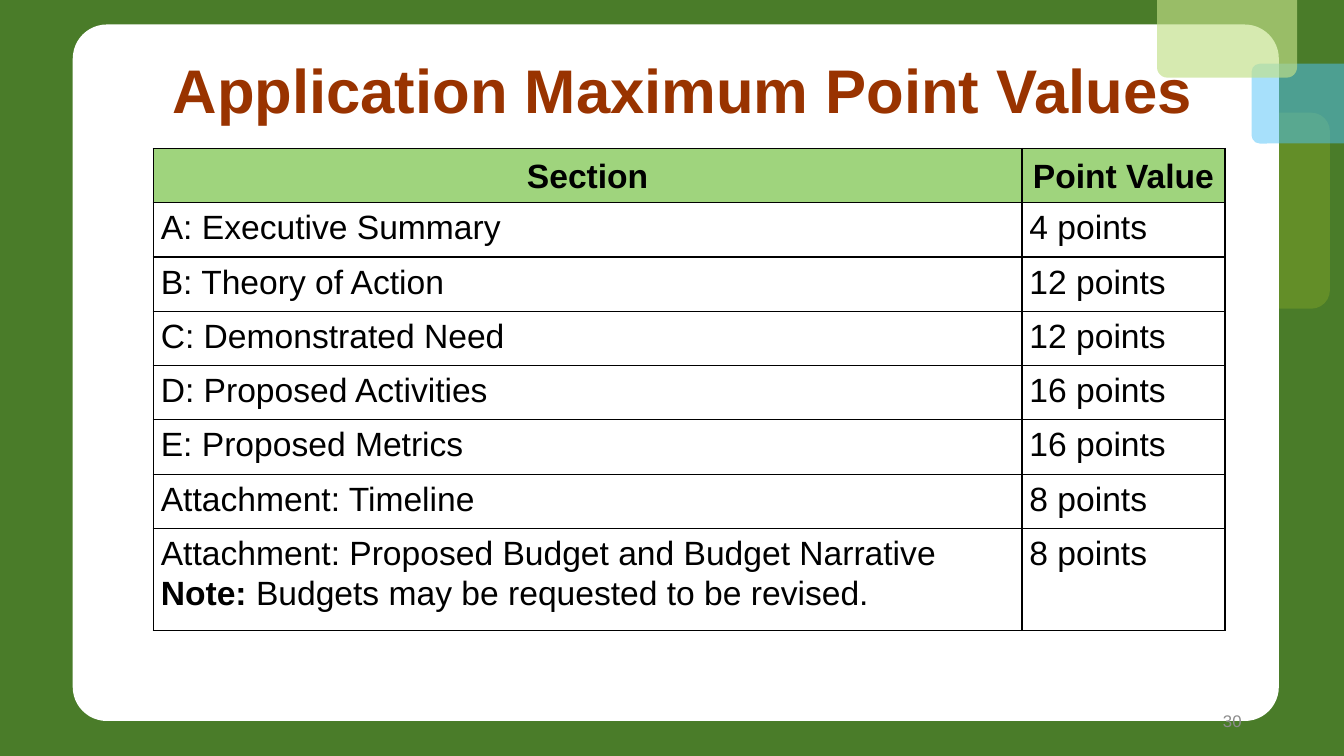
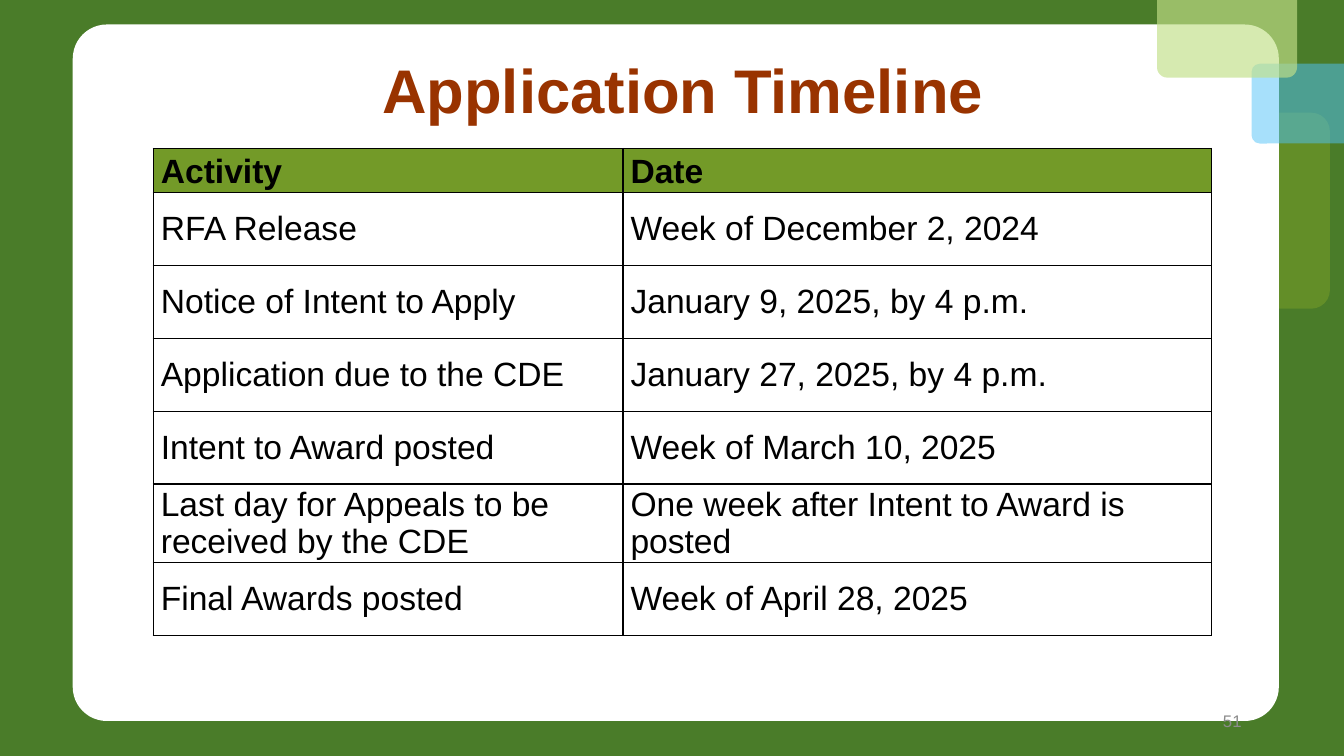
from lxml import etree
from pptx import Presentation
from pptx.dml.color import RGBColor
from pptx.enum import shapes, text
from pptx.oxml import ns
from pptx.util import Pt

# Shared look
FONT = "Arial"
COLORS = {
    "green": "4A7C29", "olive": "739A28", "white": "FFFFFF", "sky": "51C3F9",
    "lime": "C2E088", "rust": "993300", "black": "000000", "grey": "8C8C8C",
    "mint": "9FD47D",
}
# Left, top, width, height, corner ratio, colour, opacity in percent
PANELS = [
    (790, 80.5, 160, 140, 0.095, "olive", 62),
    (52, 17.5, 861.5, 497.5, 0.049, "white", 100),
    (894, 45.5, 160, 57, 0.103, "sky", 50),
    (826.5, -38, 100, 93.5, 0.079, "lime", 66),
]
TITLE_BOX = (81.5, 29, 813, 75.5)
NUMBER_BOX = (678, 500.5, 216, 28.5)
TABLE_LEFT, TABLE_TOP = 109.5, 106
BOLD_LEAD = "Note: "

# Slide content
SLIDES = [
    {
        "title": "Application Maximum Point Values", "number": "30",
        "header": "mint", "header_align": text.PP_ALIGN.CENTER,
        "body_anchor": text.MSO_ANCHOR.TOP,
        "margins": (5.4, 2.9), "body_spacing": 1.07, "space_after": 0,
        "cols": (620.5, 145), "heights": [38.8] * 7 + [72.8],
        "rows": [
            ("Section", "Point Value"),
            ("A: Executive Summary", "4 points"),
            ("B: Theory of Action", "12 points"),
            ("C: Demonstrated Need", "12 points"),
            ("D: Proposed Activities", "16 points"),
            ("E: Proposed Metrics", "16 points"),
            ("Attachment: Timeline", "8 points"),
            ("Attachment: Proposed Budget and Budget Narrative\n"
             "Note: Budgets may be requested to be revised.", "8 points"),
        ],
    },
    {
        "title": "Application Timeline", "number": "51",
        "header": "olive", "header_align": text.PP_ALIGN.LEFT,
        "body_anchor": text.MSO_ANCHOR.MIDDLE,
        "margins": (5.4, 0), "body_spacing": 1.0, "space_after": 12,
        "cols": (335.5, 420.5), "heights": [31.5] + [52.1] * 4 + [56, 52.1],
        "rows": [
            ("Activity", "Date"),
            ("RFA Release", "Week of December 2, 2024"),
            ("Notice of Intent to Apply", "January 9, 2025, by 4 p.m."),
            ("Application due to the CDE", "January 27, 2025, by 4 p.m."),
            ("Intent to Award posted", "Week of March 10, 2025"),
            ("Last day for Appeals to be received by the CDE",
             "One week after Intent to Award is posted"),
            ("Final Awards posted", "Week of April 28, 2025"),
        ],
    },
]


def rgb(name):
    return RGBColor.from_string(COLORS[name])


def points(box):
    return [Pt(v) for v in box]


def style(font, size, color, bold=False):
    font.name, font.size, font.bold = FONT, Pt(size), bold
    font.color.rgb = rgb(color)


def build_master(prs, s):
    """Draw the background panels and move them to the slide master."""
    master = prs.slide_master
    master.background.fill.solid()
    master.background.fill.fore_color.rgb = rgb("green")
    for i, (*box, corner, color, opacity) in enumerate(PANELS):
        sp = s.shapes.add_shape(shapes.MSO_SHAPE.ROUNDED_RECTANGLE, *points(box))
        sp.adjustments[0] = corner
        sp.shadow.inherit = False
        sp.line.fill.background()
        sp.fill.solid()
        sp.fill.fore_color.rgb = rgb(color)
        if opacity < 100:
            clr = sp.element.spPr.find(".//" + ns.qn("a:srgbClr"))
            etree.SubElement(clr, ns.qn("a:alpha"), val=str(opacity * 1000))
        master.shapes.element.insert(2 + i, sp.element)


def add_title(s, title):
    sp = s.shapes.title
    sp.left, sp.top, sp.width, sp.height = points(TITLE_BOX)
    tf = sp.text_frame
    tf.text = title
    tf.vertical_anchor = text.MSO_ANCHOR.MIDDLE
    p = tf.paragraphs[0]
    p.alignment, p.line_spacing = text.PP_ALIGN.CENTER, 0.9
    style(p.runs[0].font, 44, "rust", True)


def add_number(s, number):
    tf = s.shapes.add_textbox(*points(NUMBER_BOX)).text_frame
    tf.word_wrap = True
    tf.vertical_anchor = text.MSO_ANCHOR.MIDDLE
    tf.text = number
    p = tf.paragraphs[0]
    p.alignment = text.PP_ALIGN.RIGHT
    style(p.runs[0].font, 12, "grey")


def add_borders(cell):
    tc_pr = cell._tc.get_or_add_tcPr()
    for i, side in enumerate("LRTB"):
        ln = etree.Element(ns.qn("a:ln" + side), w=str(Pt(1)))
        fill = etree.SubElement(ln, ns.qn("a:solidFill"))
        etree.SubElement(fill, ns.qn("a:srgbClr"), val=COLORS["black"])
        tc_pr.insert(i, ln)


def fill_cell(cell, words, item, is_header):
    cell.margin_left = cell.margin_right = Pt(item["margins"][0])
    cell.margin_top = cell.margin_bottom = Pt(item["margins"][1])
    cell.vertical_anchor = text.MSO_ANCHOR.MIDDLE if is_header else item["body_anchor"]
    cell.fill.solid()
    cell.fill.fore_color.rgb = rgb(item["header"] if is_header else "white")
    add_borders(cell)
    cell.text = words
    for p in cell.text_frame.paragraphs:
        p.alignment = item["header_align"] if is_header else text.PP_ALIGN.LEFT
        p.line_spacing = 1.07 if is_header else item["body_spacing"]
        p.space_after = Pt(0 if is_header else item["space_after"])
        r = p.runs[0]
        style(r.font, 24, "black", is_header)
        if r.text.startswith(BOLD_LEAD):
            rest = p.add_run()
            rest.text = r.text[len(BOLD_LEAD):]
            style(rest.font, 24, "black")
            r.text = BOLD_LEAD
            r.font.bold = True


def add_grid(s, item):
    rows, cols, heights = item["rows"], item["cols"], item["heights"]
    box = (TABLE_LEFT, TABLE_TOP, sum(cols), sum(heights))
    table = s.shapes.add_table(len(rows), len(cols), *points(box)).table
    table.horz_banding = False
    for column, width in zip(table.columns, cols):
        column.width = Pt(width)
    for i, (row, height) in enumerate(zip(table.rows, heights)):
        row.height = Pt(height)
        for cell, words in zip(row.cells, rows[i]):
            fill_cell(cell, words, item, i == 0)


def main():
    prs = Presentation()
    prs.slide_width, prs.slide_height = Pt(960), Pt(540)
    for i, item in enumerate(SLIDES):
        s = prs.slides.add_slide(prs.slide_layouts[5])
        if i == 0:
            build_master(prs, s)
        add_title(s, item["title"])
        add_grid(s, item)
        add_number(s, item["number"])
    prs.save("out.pptx")


if __name__ == "__main__":
    main()
